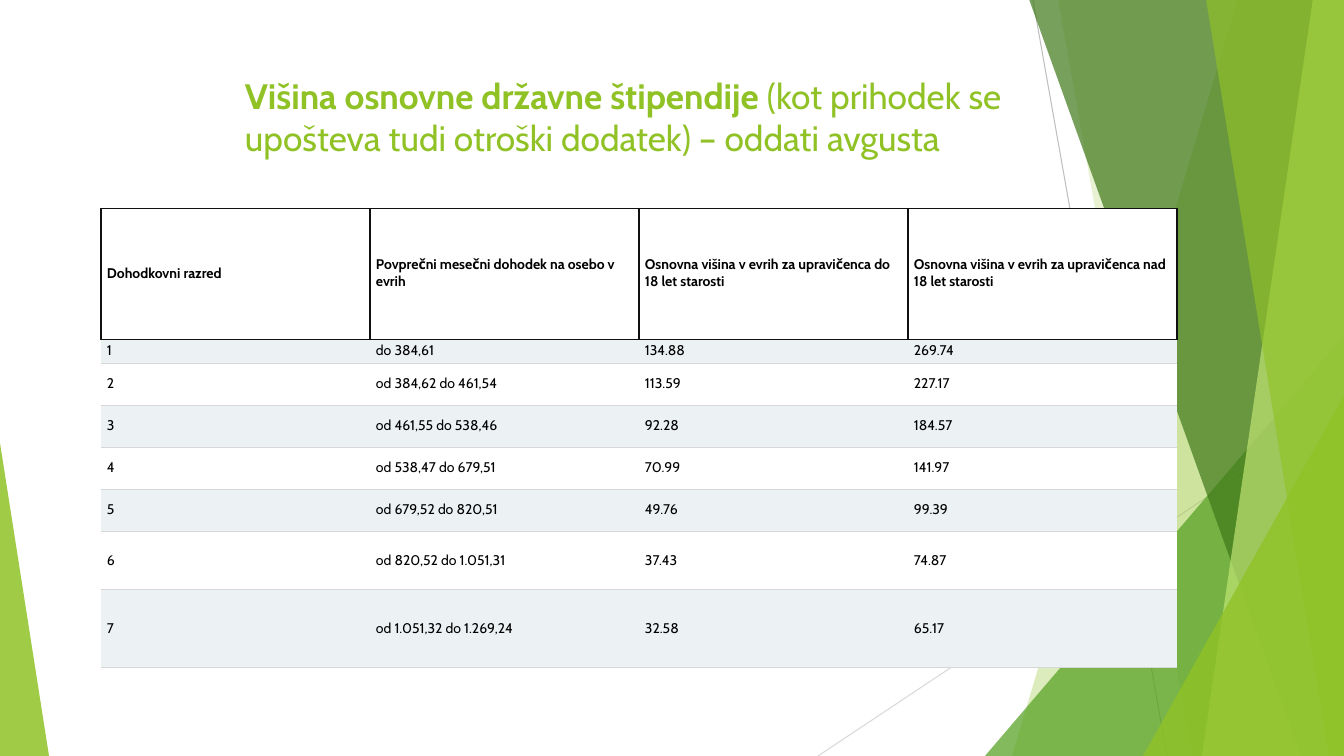
from lxml import etree
from pptx import Presentation
from pptx import util as u
from pptx.dml.color import RGBColor
from pptx.enum import shapes, text
from pptx.oxml import ns

WIDTH, HEIGHT = 1344, 756
PX_PER_INCH = 100.8
FONT = "Cabin"

GREEN = RGBColor(0x90, 0xC2, 0x26)
MID_GREEN = RGBColor(0x54, 0xA0, 0x21)
DARK_GREEN = RGBColor(0x3F, 0x78, 0x19)
PALE_GREEN = RGBColor(0xC0, 0xE4, 0x74)
GREY = RGBColor(0xBF, 0xBF, 0xBF)
LIGHT_GREY = RGBColor(0xD9, 0xD9, 0xD9)
RULE_GREY = RGBColor(0xD7, 0xD7, 0xD7)
NEAR_BLACK = RGBColor(0x11, 0x11, 0x11)
BLACK = RGBColor(0, 0, 0)
WHITE = RGBColor(0xFF, 0xFF, 0xFF)
BAND = RGBColor(0xEC, 0xF2, 0xF4)

TITLE_RUNS = [
    ("Višina osnovne državne štipendije ", True),
    ("(kot prihodek se upošteva tudi otroški dodatek) – oddati avgusta", False),
]
ROWS = [
    ("Dohodkovni razred", "Povprečni mesečni dohodek na osebo v evrih",
     "Osnovna višina v evrih za upravičenca do 18 let starosti",
     "Osnovna višina v evrih za upravičenca nad 18 let starosti"),
    ("1", "do 384,61", "134.88", "269.74"),
    ("2", "od 384,62 do 461,54", "113.59", "227.17"),
    ("3", "od 461,55 do 538,46", "92.28", "184.57"),
    ("4", "od 538,47 do 679,51", "70.99", "141.97"),
    ("5", "od 679,52 do 820,51", "49.76", "99.39"),
    ("6", "od 820,52 do 1.051,31", "37.43", "74.87"),
    ("7", "od 1.051,32 do 1.269,24", "32.58", "65.17"),
]
ROW_HEIGHTS = [131, 24, 42, 42, 42, 42, 59, 78]
COLUMN_WIDTH = 269


def px(length):
    return u.Emu(round(length * u.Inches(1) / PX_PER_INCH))


def apply_format(target, values):
    for name, value in values.items():
        setattr(target, name, value)


def add_run(paragraph, wording, size, color, bold):
    run = paragraph.add_run()
    run.text = wording
    apply_format(run.font, {"name": FONT, "size": u.Pt(size), "bold": bold})
    run.font.color.rgb = color


def paint(shape, color, opacity):
    """Give a shape a translucent fill (opacity in percent) and no outline."""
    shape.shadow.inherit = False
    shape.line.fill.background()
    shape.fill.solid()
    shape.fill.fore_color.rgb = color
    srgb = shape.fill._xPr.find(".//" + ns.qn("a:srgbClr"))
    etree.SubElement(srgb, ns.qn("a:alpha"), val=str(opacity * 1000))


def add_line(slide, start, end, color):
    line = slide.shapes.add_connector(
        shapes.MSO_CONNECTOR.STRAIGHT, *map(px, start + end))
    apply_format(line.line, {"width": u.Pt(0.75)})
    line.line.color.rgb = color
    etree.SubElement(line._element.spPr, ns.qn("a:effectLst"))


def add_ribbon(slide, top_x, bottom_x, color, opacity):
    """Fill from a slanted left edge to the right side of the slide."""
    builder = slide.shapes.build_freeform(px(top_x), px(-1))
    corners = [(WIDTH, -1), (WIDTH, HEIGHT), (bottom_x, HEIGHT)]
    builder.add_line_segments([(px(x), px(y)) for x, y in corners])
    paint(builder.convert_to_shape(), color, opacity)


def add_triangle(slide, left, top, width, apex, color, opacity):
    """Stand a triangle on the slide's bottom edge; apex is 0 left, 1 right."""
    triangle = slide.shapes.add_shape(
        shapes.MSO_SHAPE.ISOSCELES_TRIANGLE,
        *map(px, (left, top, width, HEIGHT - top)))
    triangle.adjustments[0] = apex
    paint(triangle, color, opacity)


def add_background(slide):
    add_line(slide, (1033, 0), (1167, HEIGHT), GREY)
    add_line(slide, (WIDTH, 406), (818, HEIGHT), LIGHT_GREY)
    add_ribbon(slide, 1238, 1012, GREEN, 30)
    add_ribbon(slide, 1058, 1192, GREEN, 20)
    add_triangle(slide, 985, 336, 359, 1, MID_GREEN, 72)
    add_ribbon(slide, 1029, 1301, DARK_GREEN, 70)
    add_ribbon(slide, 1313, 1202, PALE_GREEN, 70)
    add_ribbon(slide, 1206, 1329, GREEN, 65)
    add_triangle(slide, 1143, 396, 201, 1, GREEN, 80)
    add_triangle(slide, 0, 443, 49, 0, GREEN, 85)


def add_title(slide):
    frame = slide.shapes.add_textbox(*map(px, (235, 25, 907, 134))).text_frame
    apply_format(frame, {"word_wrap": True, "margin_bottom": 0,
                         "vertical_anchor": text.MSO_ANCHOR.BOTTOM})
    for wording, bold in TITLE_RUNS:
        add_run(frame.paragraphs[0], wording, 25.2, GREEN, bold)


def set_border(cell, side, color, width):
    """Draw one cell side (L, R, T or B); no colour means no line."""
    border = etree.SubElement(cell._tc.get_or_add_tcPr(), ns.qn("a:ln" + side),
                              w=str(u.Pt(width)))
    if color is None:
        etree.SubElement(border, ns.qn("a:noFill"))
    else:
        fill = etree.SubElement(border, ns.qn("a:solidFill"))
        etree.SubElement(fill, ns.qn("a:srgbClr"), val=str(color))


def fill_cell(cell, wording, row):
    header = row == 0
    side_color = NEAR_BLACK if header else None
    top_color = NEAR_BLACK if row <= 1 else RULE_GREY
    bottom_color = NEAR_BLACK if header else RULE_GREY
    for side, color, width in (("L", side_color, 1), ("R", side_color, 1),
                               ("T", top_color, 0.6), ("B", bottom_color, 0.6)):
        set_border(cell, side, color, width)
    cell.fill.solid()
    cell.fill.fore_color.rgb = BAND if row % 2 else WHITE
    apply_format(cell, {"margin_left": px(6), "margin_right": px(6),
                        "margin_top": px(3), "margin_bottom": px(3),
                        "vertical_anchor": text.MSO_ANCHOR.MIDDLE})
    add_run(cell.text_frame.paragraphs[0], wording, 10, BLACK, header)


def add_grant_table(slide):
    column_count = len(ROWS[0])
    table = slide.shapes.add_table(
        len(ROWS), column_count, px(101), px(208),
        px(COLUMN_WIDTH * column_count), px(sum(ROW_HEIGHTS))).table
    apply_format(table, {"first_row": False, "horz_banding": False})
    for column in table.columns:
        column.width = px(COLUMN_WIDTH)
    for row, (height, wordings) in enumerate(zip(ROW_HEIGHTS, ROWS)):
        table.rows[row].height = px(height)
        for column, wording in enumerate(wordings):
            fill_cell(table.cell(row, column), wording, row)


def main():
    presentation = Presentation()
    apply_format(presentation,
                 {"slide_width": px(WIDTH), "slide_height": px(HEIGHT)})
    slide = presentation.slides.add_slide(presentation.slide_layouts[6])
    add_background(slide)
    add_title(slide)
    add_grant_table(slide)
    presentation.save("out.pptx")


if __name__ == "__main__":
    main()
